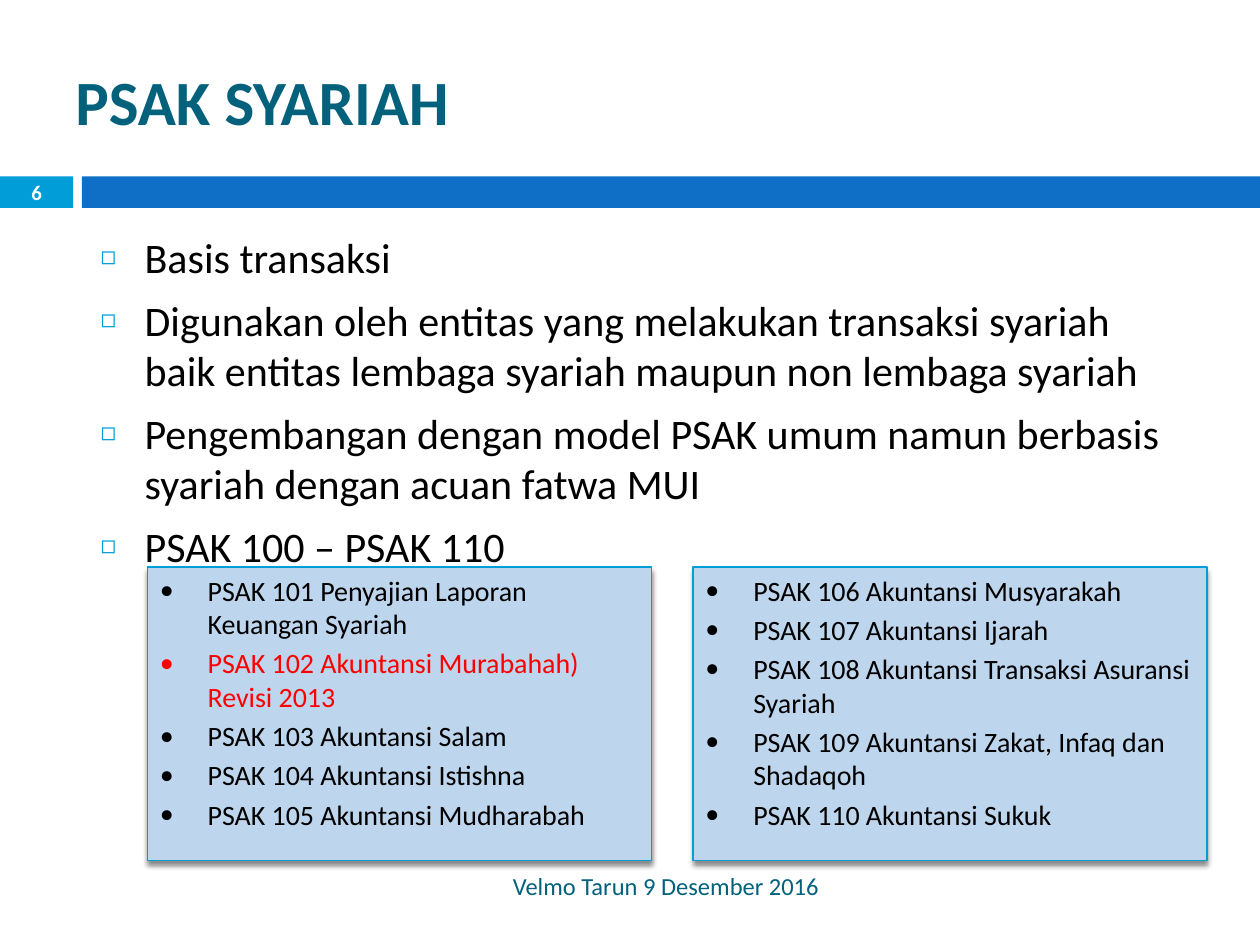
from dataclasses import dataclass

from lxml import etree
from pptx import Presentation
from pptx.dml.color import RGBColor
from pptx.enum import shapes, text
from pptx.oxml import ns
from pptx.util import Inches, Pt


@dataclass(frozen=True)
class Theme:
    font: str = "Calibri"
    ink: str = "000000"
    white: str = "FFFFFF"
    teal: str = "04617B"
    cyan: str = "009DD9"
    blue: str = "0F6FC6"
    pale: str = "BDD5ED"
    red: str = "FF0000"
    title: float = 36
    body: float = 24
    list: float = 16
    foot: float = 14
    page: float = 11.9


T = Theme()
POINTS = [
    "Basis transaksi",
    "Digunakan oleh entitas yang melakukan transaksi syariah baik entitas "
    "lembaga syariah maupun non lembaga syariah",
    "Pengembangan dengan model PSAK umum namun berbasis syariah dengan acuan fatwa MUI",
    "PSAK 100 – PSAK 110",
]
LEFT = [
    "PSAK 101 Penyajian Laporan Keuangan Syariah",
    "PSAK 102 Akuntansi Murabahah) Revisi 2013",
    "PSAK 103 Akuntansi Salam",
    "PSAK 104 Akuntansi Istishna",
    "PSAK 105 Akuntansi Mudharabah",
]
RIGHT = [
    "PSAK 106 Akuntansi Musyarakah",
    "PSAK 107 Akuntansi Ijarah",
    "PSAK 108 Akuntansi Transaksi Asuransi Syariah",
    "PSAK 109 Akuntansi Zakat, Infaq dan Shadaqoh",
    "PSAK 110 Akuntansi Sukuk",
]


def add_sub(node, tag, **attrs):
    return etree.SubElement(node, ns.qn(tag), attrs)


def add_bullet(para, mark, indent, color=None, scale=None):
    props = para._p.get_or_add_pPr()
    props.set("marL", str(Inches(indent)))
    props.set("indent", str(-Inches(indent)))
    if color:
        add_sub(add_sub(props, "a:buClr"), "a:srgbClr", val=color)
    if scale:
        add_sub(props, "a:buSzPct", val=str(scale * 1000))
    add_sub(props, "a:buFont", typeface=T.font)
    add_sub(props, "a:buChar", char=mark)


def write(shape, lines, size, color=T.ink, bold=False, align="LEFT",
          anchor="TOP", gap=0, bullet=None, accents=()):
    """Fill a shape with paragraphs; accents are the lines set in red."""
    frame = shape.text_frame
    frame.word_wrap = True
    frame.vertical_anchor = text.MSO_ANCHOR[anchor]
    for i, line in enumerate(lines):
        para = frame.add_paragraph() if i else frame.paragraphs[0]
        para.alignment = text.PP_ALIGN[align]
        para.space_before = Pt(gap)
        if bullet:
            add_bullet(para, **bullet)
        run = para.add_run()
        run.text = line
        font = run.font
        font.name, font.size, font.bold = T.font, Pt(size), bold
        font.color.rgb = RGBColor.from_string(T.red if line in accents else color)


def add_text(slide, box, lines, size, **form):
    shape = slide.shapes.add_textbox(*map(Inches, box))
    write(shape, lines, size, **form)


def add_rect(slide, box, fill, line=None):
    shape = slide.shapes.add_shape(shapes.MSO_SHAPE.RECTANGLE, *map(Inches, box))
    shape.shadow.inherit = False
    shape.fill.solid()
    shape.fill.fore_color.rgb = RGBColor.from_string(fill)
    if line:
        shape.line.color.rgb = RGBColor.from_string(line)
        shape.line.width = Pt(0.79)
    else:
        shape.line.fill.background()
    return shape


def add_shadow(shape):
    effects = shape._element.spPr.find(ns.qn("a:effectLst"))
    outer = add_sub(effects, "a:outerShdw", blurRad=str(Pt(3)), dist=str(Pt(2.4)),
                    dir="5400000", algn="ctr", rotWithShape="0")
    add_sub(add_sub(outer, "a:srgbClr", val=T.ink), "a:alpha", val="45000")


def add_band(slide, box, page):
    """Page number tab, a gap, and the bar that fills the rest."""
    x, y, w, h = box
    tab, start = 0.58, 0.65
    number = add_rect(slide, (x, y, tab, h), T.cyan)
    number.text_frame.margin_top = number.text_frame.margin_bottom = 0
    write(number, [page], T.page, color=T.white, bold=True,
          align="CENTER", anchor="MIDDLE")
    add_rect(slide, (x + start, y, w - start, h), T.blue)


def add_points(slide, box):
    add_text(slide, box, POINTS, T.body, gap=7,
             bullet=dict(mark="◻", indent=0.35, color=T.cyan, scale=60))


def add_panel(slide, box, lines, accents=()):
    panel = add_rect(slide, box, T.pale, T.cyan)
    add_shadow(panel)
    write(panel, lines, T.list, gap=3.2, accents=accents,
          bullet=dict(mark="•", indent=0.38))


def main():
    deck = Presentation()
    deck.slide_width, deck.slide_height = Inches(10), Inches(7.5)
    slide = deck.slides.add_slide(deck.slide_layouts[6])
    add_band(slide, (0, 1.4, 10, 0.25), "6")
    add_text(slide, (0.5, 0.5, 9, 0.6), ["PSAK SYARIAH"], T.title,
             color=T.teal, bold=True, anchor="MIDDLE")
    add_points(slide, (0.7, 1.79, 8.8, 2.8))
    add_panel(slide, (5.5, 4.5, 4.08, 2.33), RIGHT)
    add_panel(slide, (1.17, 4.5, 4, 2.33), LEFT, accents=LEFT[1:2])
    add_text(slide, (0.67, 6.83, 5.93, 0.4), ["Velmo Tarun 9 Desember 2016"],
             T.foot, color=T.teal, align="RIGHT", anchor="MIDDLE")
    deck.save("out.pptx")


if __name__ == "__main__":
    main()
